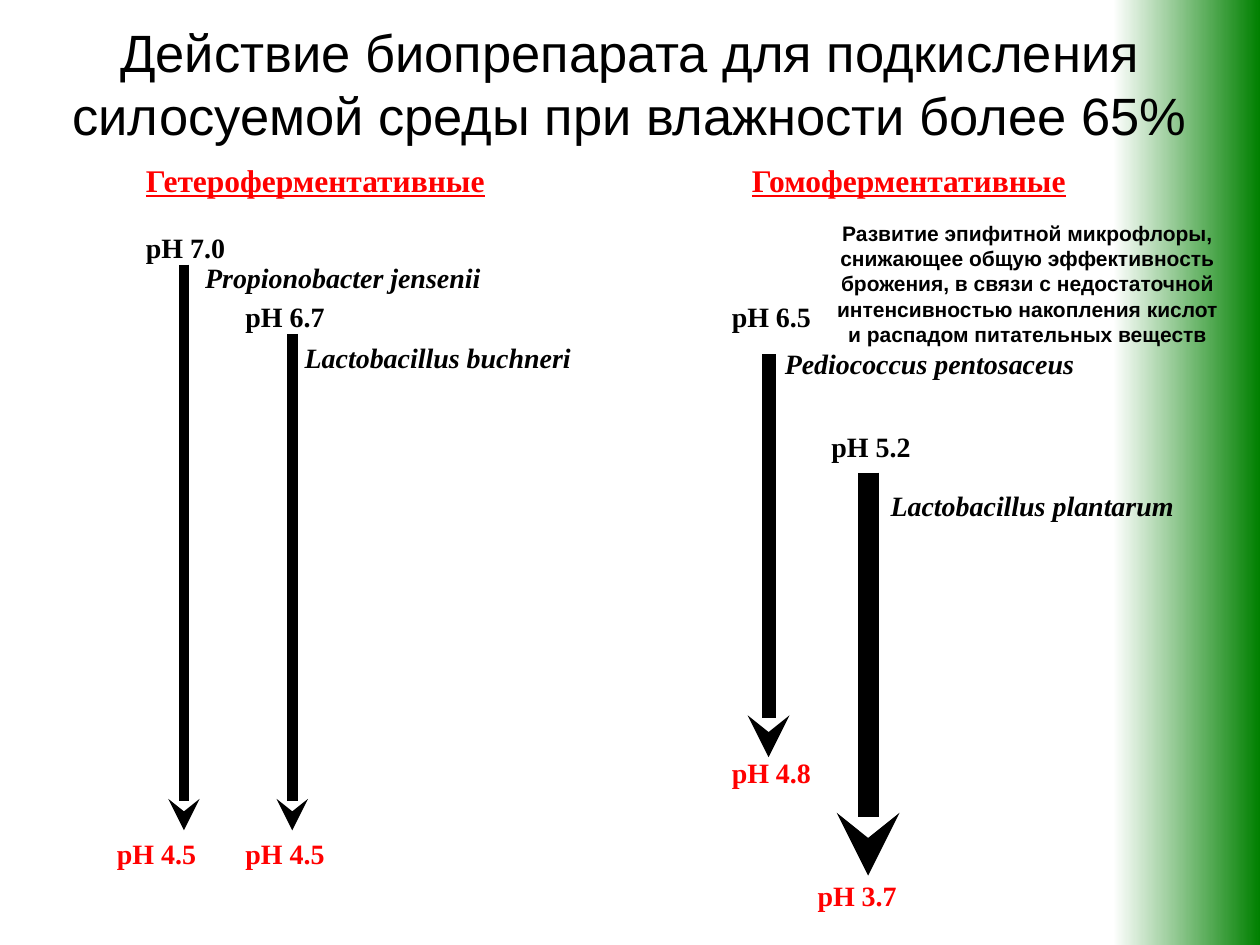
from lxml import etree
from pptx import Presentation
from pptx.dml.color import RGBColor
from pptx.enum.shapes import MSO_CONNECTOR, MSO_SHAPE
from pptx.enum.text import MSO_ANCHOR, MSO_AUTO_SIZE, PP_ALIGN
from pptx.oxml.ns import qn
from pptx.util import Inches, Pt

RECT, STRAIGHT = MSO_SHAPE.RECTANGLE, MSO_CONNECTOR.STRAIGHT
LEFT, CENTER = PP_ALIGN.LEFT, PP_ALIGN.CENTER
TOP, MIDDLE = MSO_ANCHOR.TOP, MSO_ANCHOR.MIDDLE
FIT, FIXED = MSO_AUTO_SIZE.SHAPE_TO_FIT_TEXT, MSO_AUTO_SIZE.NONE
SANS, SERIF = "Arial", "Times New Roman"
BLACK, RED, WHITE, GREEN = "000000", "FF0000", "FFFFFF", "008000"

# Content
TITLE = "Действие биопрепарата для подкисления силосуемой среды при влажности более 65%"
GROUPS = [("Гетероферментативные", 1.06, 2.92), ("Гомоферментативные", 5.87, 2.73)]
NOTE = [
    "Развитие эпифитной микрофлоры,",
    "снижающее общую эффективность",
    "брожения, в связи с недостаточной",
    "интенсивностью накопления кислот",
    "и распадом питательных веществ",
]
# Each label is (text, left, top, width); a plate is the white panel's width
BACTERIA = [
    {"x": 1.46, "span": (2.10, 6.59), "weight": 6, "plate": 1.18,
     "start": ("pH 7.0", 1.06, 1.78), "end": ("pH 4.5", 0.83, 6.59),
     "species": ("Propionоbacter jensenii", 1.53, 2.02, 2.40)},
    {"x": 2.32, "span": (2.65, 6.59), "weight": 6, "plate": 1.10,
     "start": ("pH 6.7", 1.85, 2.33), "end": ("pH 4.5", 1.85, 6.59),
     "species": ("Lactobacillus buchneri", 2.32, 2.65, 2.67)},
    {"x": 6.10, "span": (2.81, 6.01), "weight": 8, "plate": None,
     "start": ("pH 6.5", 5.71, 2.33), "end": ("pH 4.8", 5.71, 5.95),
     "species": ("Pediococcus pentosaceus", 6.13, 2.70, 2.51)},
    {"x": 6.89, "span": (3.75, 6.95), "weight": 12, "plate": None,
     "start": ("pH 5.2", 6.50, 3.36), "end": ("pH 3.7", 6.39, 6.92),
     "species": ("Lactobacillus plantarum", 6.97, 3.83, 2.67)},
]
LABEL_W, LABEL_H, PLATE_H = 0.83, 0.37, 0.9

prs = Presentation()
prs.slide_width, prs.slide_height = Inches(10), Inches(7.5)
slide = prs.slides.add_slide(prs.slide_layouts[6])


def color(value):
    return RGBColor.from_string(value)


def add_panel(left, top, width, height):
    panel = slide.shapes.add_shape(RECT, *map(Inches, (left, top, width, height)))
    panel.shadow.inherit = False
    panel.line.fill.background()
    return panel


def write(shape, lines, size, face=SERIF, ink=BLACK, align=LEFT, anchor=TOP,
          wrap=False, fit=FIT, bold=True, italic=False, underline=False):
    frame = shape.text_frame
    frame.word_wrap, frame.auto_size, frame.vertical_anchor = wrap, fit, anchor
    for i, line in enumerate(lines):
        paragraph = frame.add_paragraph() if i else frame.paragraphs[0]
        paragraph.alignment = align
        run = paragraph.add_run()
        run.text = line
        font = run.font
        font.name, font.size, font.color.rgb = face, Pt(size), color(ink)
        font.bold, font.italic, font.underline = bold, italic, underline


def add_text(left, top, width, height, lines, size, **style):
    box = slide.shapes.add_textbox(*map(Inches, (left, top, width, height)))
    write(box, lines, size, **style)
    return box


def add_arrow(x, top, bottom, weight):
    arrow = slide.shapes.add_connector(
        STRAIGHT, Inches(x), Inches(top), Inches(x), Inches(bottom))
    arrow.line.width = Pt(weight)
    arrow.line.color.rgb = color(BLACK)
    etree.SubElement(arrow.line._get_or_add_ln(), qn("a:tailEnd"), type="stealth")
    etree.SubElement(arrow._element.spPr, qn("a:effectLst"))


# Green band along the right edge
band = add_panel(8.83, 0, 1.17, 7.5)
band.fill.gradient()
band.fill.gradient_angle = 0
for stop, shade, position in zip(band.fill.gradient_stops, (WHITE, GREEN), (0, 1)):
    stop.color.rgb = color(shade)
    stop.position = position

# Title and group headings
add_text(0, 0.11, 10, 1.1, [TITLE], 30, face=SANS, align=CENTER, wrap=True, bold=False)
for heading, left, width in GROUPS:
    add_text(left, 1.23, width, 0.4, [heading], 18, ink=RED, underline=True)

# Final pH values, on white plates where given
for item in BACTERIA:
    value, left, top = item["end"]
    if item["plate"]:
        plate = add_panel(left, top, item["plate"], PLATE_H)
        plate.fill.solid()
        plate.fill.fore_color.rgb = color(WHITE)
        write(plate, [value], 16, ink=RED, wrap=True, fit=FIXED)
    else:
        add_text(left, top, LABEL_W, LABEL_H, [value], 16, ink=RED)

# Arrows with initial pH and species
for item in BACTERIA:
    add_arrow(item["x"], *item["span"], item["weight"])
    value, left, top = item["start"]
    add_text(left, top, LABEL_W, LABEL_H, [value], 16)
    species, left, top, width = item["species"]
    add_text(left, top, width, LABEL_H, [species], 16, italic=True)

# Note on epiphytic microflora
note = add_text(6.5, 1.7, 3.31, 1.1, NOTE, 12, face=SANS, align=CENTER,
                anchor=MIDDLE, fit=FIXED)
note.text_frame.margin_left = note.text_frame.margin_right = 0

prs.save("out.pptx")
